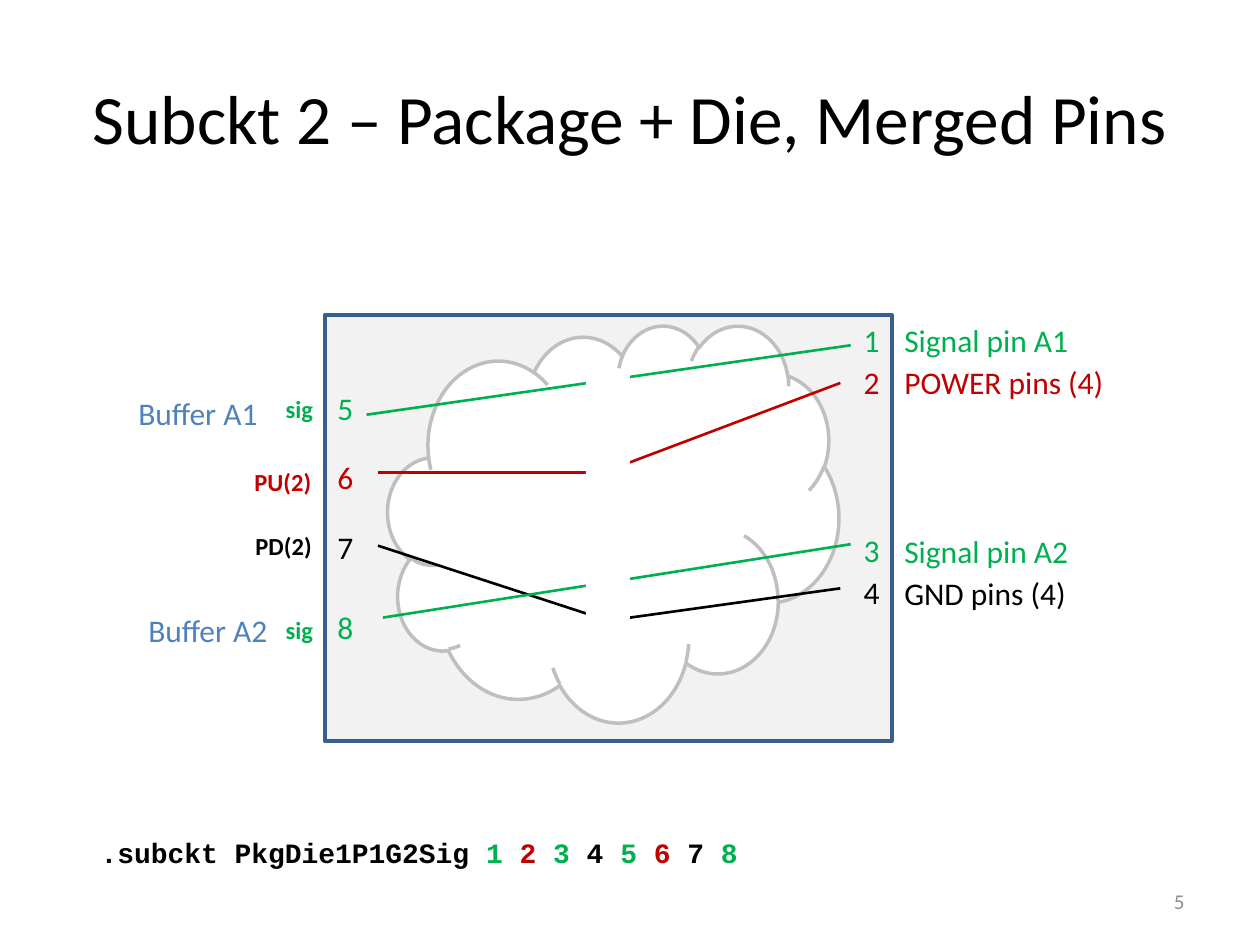
import pptx
import pptx.util
import pptx.dml.color
import pptx.enum.shapes
import pptx.enum.text
import pptx.oxml.ns
import lxml.etree

Cm = pptx.util.Cm
Pt = pptx.util.Pt
RGB = pptx.dml.color.RGBColor
Shape = pptx.enum.shapes.MSO_SHAPE
Align = pptx.enum.text.PP_ALIGN
Anchor = pptx.enum.text.MSO_ANCHOR

BLACK = RGB(0x00, 0x00, 0x00)
WHITE = RGB(0xFF, 0xFF, 0xFF)
GREEN = RGB(0x00, 0xB0, 0x50)
RED = RGB(0xC0, 0x00, 0x00)
BLUE = RGB(0x4F, 0x81, 0xBD)
NAVY = RGB(0x3A, 0x5F, 0x8C)
PALE = RGB(0xF2, 0xF2, 0xF2)
SILVER = RGB(0xBF, 0xBF, 0xBF)
GRAY = RGB(0x8C, 0x8C, 0x8C)


def write(para, text, size=18, color=BLACK, bold=False, font="Calibri"):
    run = para.add_run()
    run.text = text
    run.font.size = Pt(size)
    run.font.name = font
    run.font.bold = bold
    run.font.color.rgb = color


class Deck:
    def __init__(self):
        self.file = pptx.Presentation()
        self.file.slide_width = Cm(25.4)
        self.file.slide_height = Cm(19.05)
        self.slide = self.file.slides.add_slide(self.file.slide_layouts[5])

    def title(self, text, box):
        head = self.slide.shapes.title
        head.left, head.top, head.width, head.height = map(Cm, box)
        frame = head.text_frame
        frame.vertical_anchor = Anchor.MIDDLE
        frame.paragraphs[0].alignment = Align.CENTER
        write(frame.paragraphs[0], text, size=39.6)

    def shape(self, kind, box, fill, line=None):
        item = self.slide.shapes.add_shape(kind, *map(Cm, box))
        item.shadow.inherit = False
        item.fill.solid()
        item.fill.fore_color.rgb = fill
        if line is None:
            item.line.fill.background()
        else:
            item.line.color.rgb = line
            item.line.width = Pt(2)

    def wire(self, start, end, color):
        item = self.slide.shapes.add_connector(
            pptx.enum.shapes.MSO_CONNECTOR.STRAIGHT, *map(Cm, start + end))
        item.line.color.rgb = color
        item.line.width = Pt(1.5)
        lxml.etree.SubElement(item._element.spPr, pptx.oxml.ns.qn("a:effectLst"))

    def frame(self, box, wrap=False):
        frame = self.slide.shapes.add_textbox(*map(Cm, box)).text_frame
        frame.word_wrap = wrap
        return frame

    def label(self, text, box, **style):
        write(self.frame(box).paragraphs[0], text, **style)

    def pins(self, box, rows, after, align=Align.LEFT, wrap=False):
        frame = self.frame(box, wrap)
        for i, (text, color, before) in enumerate(rows):
            para = frame.add_paragraph() if i else frame.paragraphs[0]
            para.alignment = align
            para.space_before = Pt(before)
            para.space_after = Pt(after)
            write(para, text, color=color)


def main():
    deck = Deck()
    deck.title("Subckt 2 – Package + Die, Merged Pins", (1.27, 0.76, 22.86, 3.18))
    deck.shape(Shape.RECTANGLE, (6.55, 6.35, 11.43, 8.59), PALE, NAVY)
    deck.shape(Shape.CLOUD, (7.82, 6.55, 9.09, 8), WHITE, SILVER)

    deck.pins((16.71, 6.35, 1.27, 8.59),
              [("1", GREEN, 0), ("2", RED, 0), ("3", GREEN, 72), ("4", BLACK, 0)],
              2.4, Align.RIGHT, True)
    deck.pins((6.55, 7.72, 0.84, 3.86),
              [("5", GREEN, 0), ("6", RED, 0), ("7", BLACK, 0)], 18)
    deck.pins((6.55, 12.14, 0.84, 1.02), [("8", GREEN, 0)], 0)

    for text, row, width, color in (
            ("Signal pin A1", 0, 3.86, GREEN), ("POWER pins (4)", 1, 4.57, RED),
            ("Signal pin A2", 5, 3.86, GREEN), ("GND pins (4)", 6, 3.81, BLACK)):
        deck.label(text, (17.98, 6.35 + 0.85 * row, width, 1.02), color=color)

    for start, end, color in (
            ((7.62, 9.53), (11.81, 9.53), RED),
            ((7.62, 11), (12.07, 12.45), BLACK),
            ((7.39, 8.36), (17.15, 6.96), GREEN),
            ((7.72, 12.45), (17.15, 10.97), GREEN),
            ((12.7, 9.32), (16.94, 7.72), RED),
            ((12.7, 12.45), (16.94, 11.86), BLACK)):
        deck.wire(start, end, color)

    for text, left, top in (("Buffer A1", 2.54, 7.82), ("Buffer A2", 2.74, 12.19)):
        deck.label(text, (left, top, 2.95, 1.02), color=BLUE)
    for text, left, top, width, color in (
            ("PU(2)", 4.88, 9.3, 1.68, RED), ("PD(2)", 4.9, 10.59, 1.65, BLACK),
            ("sig", 5.51, 7.82, 1.07, GREEN), ("sig", 5.51, 12.27, 1.07, GREEN)):
        deck.label(text, (left, top, width, 0.86), size=14, color=color, bold=True)

    deck.shape(Shape.RECTANGLE, (11.81, 7.52, 0.89, 6.02), WHITE)

    code = deck.frame((1.78, 16.71, 13.54, 0.94)).paragraphs[0]
    for text, color in (
            (".subckt PkgDie1P1G2Sig ", BLACK), ("1 ", GREEN), ("2 ", RED),
            ("3", GREEN), (" 4 ", BLACK), ("5 ", GREEN), ("6", RED),
            (" 7 ", BLACK), ("8", GREEN)):
        write(code, text, size=16, color=color, bold=True, font="Courier New")

    foot = deck.frame((18.21, 17.65, 5.92, 1.02), True)
    foot.vertical_anchor = Anchor.MIDDLE
    foot.paragraphs[0].alignment = Align.RIGHT
    write(foot.paragraphs[0], "5", size=12, color=GRAY)
    deck.file.save("out.pptx")


if __name__ == "__main__":
    main()
